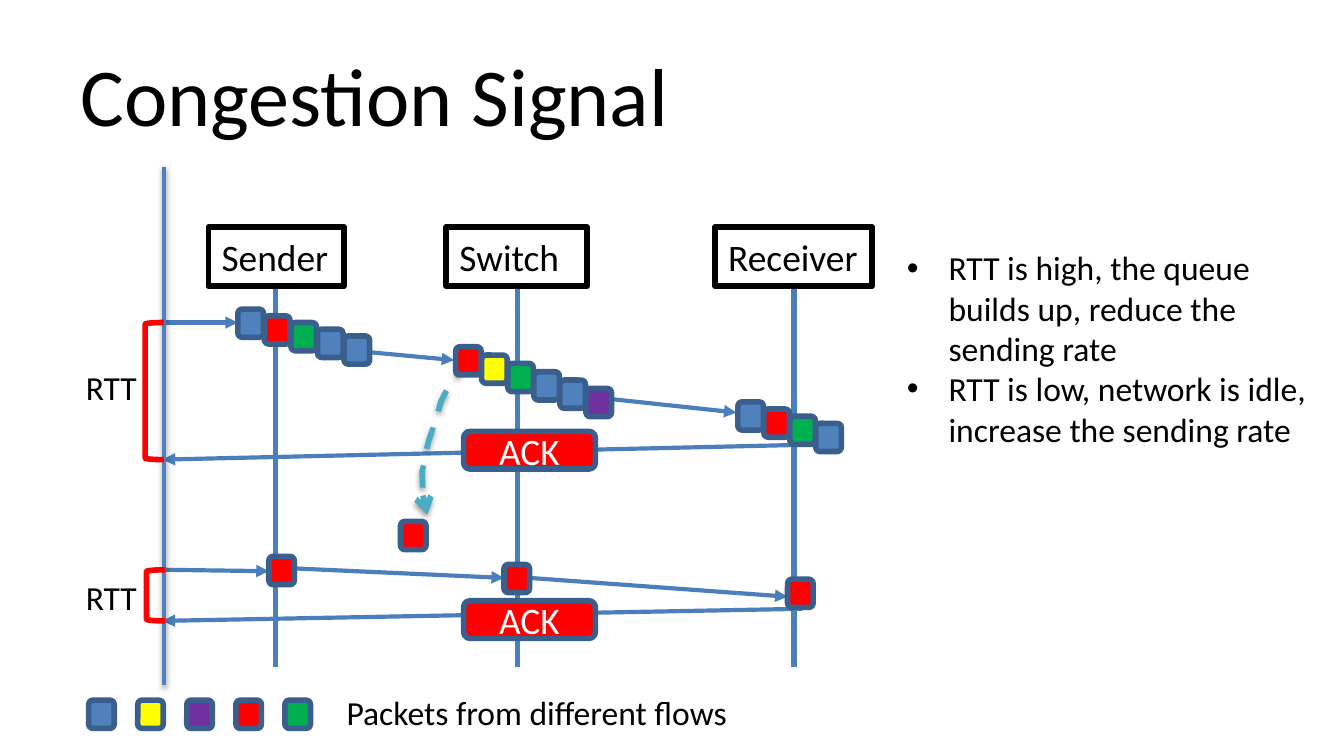
"""Build the Congestion Signal slide: packets, queues and RTT between sender, switch and receiver."""
from lxml.etree import SubElement
from pptx import Presentation
from pptx.dml.color import RGBColor
from pptx.enum.dml import MSO_LINE as Dash
from pptx.enum.shapes import MSO_CONNECTOR as Connector, MSO_SHAPE as Shape
from pptx.enum.text import MSO_ANCHOR as Anchor, MSO_AUTO_SIZE as AutoSize, PP_ALIGN as Align
from pptx.oxml.ns import qn
from pptx.util import Inches, Pt

rgb = RGBColor.from_string
BLACK, WHITE = "000000", "FFFFFF"
BLUE, YELLOW, PURPLE, RED, GREEN = "4F81BD", "FFFF00", "7030A0", "FF0000", "00B050"
EDGE, WIRE, TEAL = "3A5F8C", "4B7EBC", "4BACC6"


def write(frame, text, size=18, color=BLACK, align=Align.LEFT, anchor=Anchor.TOP):
    frame.word_wrap = True
    frame.auto_size = AutoSize.NONE
    frame.vertical_anchor = anchor
    frame.margin_right = Inches(0.1 if align == Align.CENTER else 0)
    frame.text = text
    for paragraph in frame.paragraphs:
        paragraph.alignment = align
        font = paragraph.runs[0].font
        font.name, font.size, font.color.rgb = "Calibri", Pt(size), rgb(color)


def add_block(kind, left, top, width, height, line=EDGE, fill=None):
    block = slide.shapes.add_shape(kind, Inches(left), Inches(top), Inches(width), Inches(height))
    block.shadow.inherit = False
    block.line.color.rgb = rgb(line)
    block.line.width = Pt(3)
    if fill:
        block.fill.solid()
        block.fill.fore_color.rgb = rgb(fill)
    else:
        block.fill.background()
    return block


prs = Presentation()
prs.slide_width = Inches(10)
prs.slide_height = prs.slide_width * 9 // 16
slide = prs.slides.add_slide(prs.slide_layouts[5])

title = slide.shapes.title
title.left, title.top, title.width, title.height = Inches(0.5), Inches(0.23), Inches(9), Inches(0.94)
write(title.text_frame, "Congestion Signal", size=44, anchor=Anchor.MIDDLE)

lifelines = [(x, 2.12, x, 4.96, WIRE, 3) for x in (2.05, 3.85, 5.91)]
arrows = [
    (*ends, WIRE, 2.25)
    for ends in [
        (1.21, 2.4, 1.77, 2.4),
        (2.74, 2.62, 3.38, 2.68),
        (4.55, 2.97, 5.48, 3.07),
        (5.97, 3.31, 1.21, 3.42),
        (1.23, 4.24, 2, 4.25),
        (2.2, 4.23, 3.75, 4.3),
        (3.94, 4.3, 5.86, 4.44),
        (5.97, 4.53, 1.21, 4.62),
    ]
]
time_axis = (1.22, 1.24, 1.22, 5.1, BLUE, 2)
shadowed = []
for stroke in lifelines + arrows + [time_axis]:
    *ends, color, width = stroke
    wire = slide.shapes.add_connector(Connector.STRAIGHT, *map(Inches, ends))
    wire.line.color.rgb = rgb(color)
    wire.line.width = Pt(width)
    if stroke in arrows:
        SubElement(wire.line._get_or_add_ln(), qn("a:tailEnd"), type="triangle")
    effects = SubElement(wire.element.spPr, qn("a:effectLst"))
    if stroke == time_axis:
        shadowed.append(effects)

drop_points = [
    (3.52, 2.71), (3.45, 2.73), (3.38, 2.81), (3.32, 2.91), (3.28, 2.99), (3.25, 3.1), (3.22, 3.19),
    (3.19, 3.28), (3.17, 3.36), (3.16, 3.43), (3.14, 3.51), (3.15, 3.73), (3.16, 3.8), (3.18, 3.83),
]
start, *rest = [(Inches(x), Inches(y)) for x, y in drop_points]
builder = slide.shapes.build_freeform(*start)
builder.add_line_segments(rest, close=False)
drop_path = builder.convert_to_shape()
drop_path.fill.background()
drop_path.line.color.rgb = rgb(TEAL)
drop_path.line.width = Pt(3)
drop_path.line.dash_style = Dash.DASH
SubElement(drop_path.line._get_or_add_ln(), qn("a:tailEnd"), type="arrow")
shadowed.append(SubElement(drop_path.element.spPr, qn("a:effectLst")))

for effects in shadowed:
    shadow = SubElement(effects, qn("a:outerShdw"), blurRad=str(Pt(3.1)), dist=str(Pt(1.6)), dir="5400000")
    tint = SubElement(shadow, qn("a:srgbClr"), val=BLACK)
    SubElement(tint, qn("a:alpha"), val="38000")

for name, left, width in [("Sender", 1.55, 1.01), ("Switch", 3.32, 1.05), ("Receiver", 5.32, 1.17)]:
    node = add_block(Shape.RECTANGLE, left, 1.69, width, 0.44, line=BLACK, fill=WHITE)
    write(node.text_frame, name, size=20)

packet_rows = [
    ((1.77, 2.3), (2.56, 2.5), [BLUE, RED, GREEN, BLUE, BLUE]),
    ((3.39, 2.58), (4.36, 2.89), [RED, YELLOW, GREEN, BLUE, BLUE, PURPLE]),
    ((5.49, 2.99), (6.07, 3.15), [BLUE, RED, GREEN, BLUE]),
    ((0.66, 5.21), (2.12, 5.21), [BLUE, YELLOW, PURPLE, RED, GREEN]),
    ((2.98, 3.88), (2.98, 3.88), [RED]),
    ((2, 4.14), (2, 4.14), [RED]),
    ((3.75, 4.2), (3.75, 4.2), [RED]),
    ((5.86, 4.31), (5.86, 4.31), [RED]),
]
for (first_x, first_y), (last_x, last_y), flows in packet_rows:
    gaps = max(len(flows) - 1, 1)
    for i, flow in enumerate(flows):
        left = first_x + i * (last_x - first_x) / gaps
        top = first_y + i * (last_y - first_y) / gaps
        add_block(Shape.ROUNDED_RECTANGLE, left, top, 0.19, 0.21, fill=flow)

for ack_top, rtt_top, bracket_left, bracket_top, bracket_height in [
    (3.21, 2.68, 1.08, 2.4, 1.02),
    (4.47, 4.24, 1.09, 4.24, 0.38),
]:
    ack = add_block(Shape.ROUNDED_RECTANGLE, 3.45, ack_top, 0.98, 0.28, fill=RED)
    write(ack.text_frame, "ACK", size=20, color=WHITE, align=Align.CENTER, anchor=Anchor.MIDDLE)
    add_block(Shape.LEFT_BRACKET, bracket_left, bracket_top, 0.14, bracket_height, line=RED)
    rtt = slide.shapes.add_textbox(Inches(0.54), Inches(rtt_top), Inches(1), Inches(0.4))
    write(rtt.text_frame, "RTT")

legend = slide.shapes.add_textbox(Inches(2.48), Inches(5.1), Inches(3.51), Inches(0.4))
write(legend.text_frame, "Packets from different flows")

rules = slide.shapes.add_textbox(Inches(6.65), Inches(1.79), Inches(3.23), Inches(1.62))
write(
    rules.text_frame,
    "RTT is high, the queue builds up, reduce the sending rate\n"
    "RTT is low, network is idle, increase the sending rate",
)
for rule in rules.text_frame.paragraphs:
    props = rule._p.get_or_add_pPr()
    props.set("marL", str(Inches(0.31)))
    props.set("indent", str(-Inches(0.31)))
    SubElement(props, qn("a:buFont"), typeface="Arial")
    SubElement(props, qn("a:buChar"), char="•")

prs.save("out.pptx")
